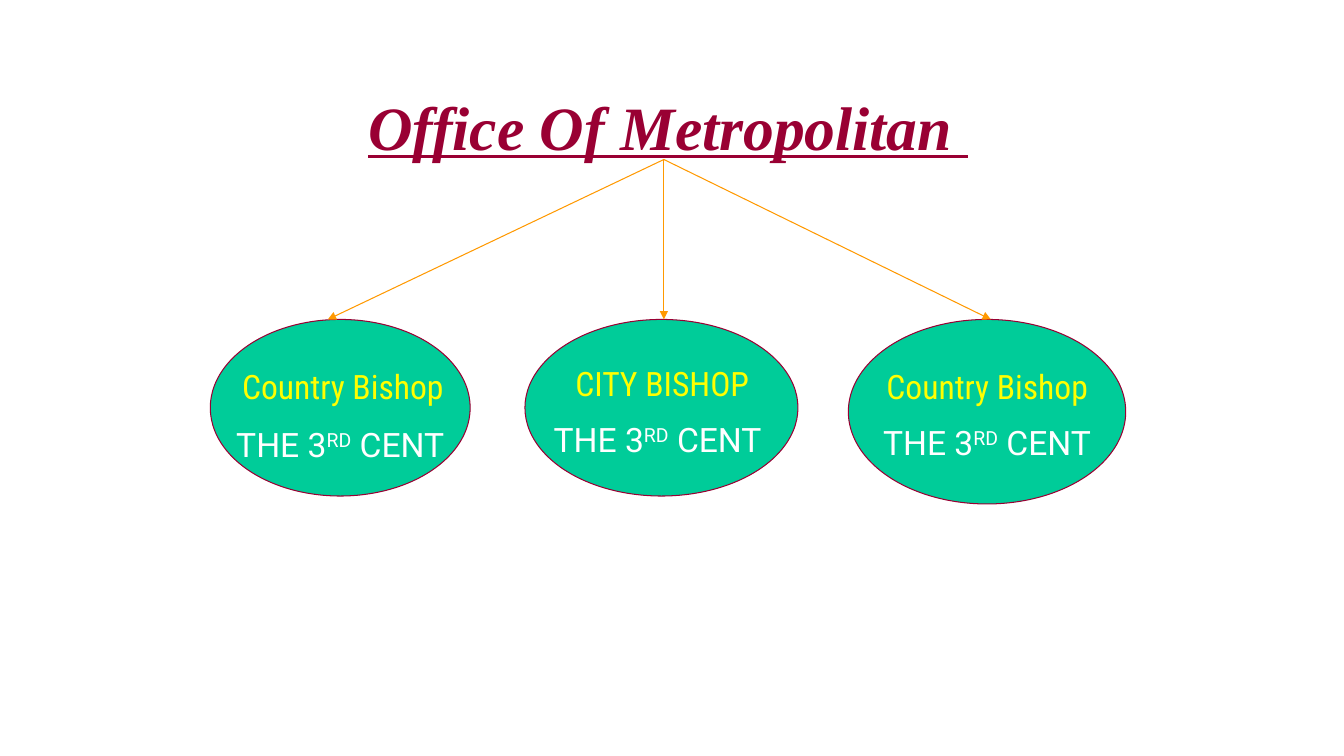
import pptx
import pptx.util
import pptx.dml.color
import pptx.enum.shapes
import pptx.enum.text
import pptx.oxml.ns
import lxml.etree

Cm = pptx.util.Cm
Pt = pptx.util.Pt
COLORS = {
    "title": "990033",
    "ellipse": "00CC99",
    "arrow": "FF9900",
    "bishop": "FFFF00",
    "century": "FFFFFF",
}


def rgb(name):
    return pptx.dml.color.RGBColor.from_string(COLORS[name])


def add_text(text, paragraph, color, font="Roboto", size=24, emphasis=False, baseline=0):
    paragraph.alignment = pptx.enum.text.PP_ALIGN.CENTER
    run = paragraph.add_run()
    run.text = text
    run.font.name = font
    run.font.size = Pt(size)
    run.font.color.rgb = rgb(color)
    run.font.bold = run.font.italic = run.font.underline = emphasis
    if baseline:
        run.font._element.set("baseline", str(baseline * 1000))


presentation = pptx.Presentation()
presentation.slide_width = Cm(33.87)
presentation.slide_height = Cm(19.05)
slide = presentation.slides.add_slide(presentation.slide_layouts[6])

title = slide.shapes.add_textbox(Cm(6.15), Cm(1.47), Cm(21.39), Cm(3.38))
title.text_frame.word_wrap = True
title.text_frame.vertical_anchor = pptx.enum.text.MSO_ANCHOR.MIDDLE
add_text("Office Of Metropolitan ", title.text_frame.paragraphs[0], "title",
         font="Times New Roman", size=44, emphasis=True)

ellipse_top = 8.05
ellipses = [
    (5.3, 6.55, 4.45, 1.85, " CENT"),
    (13.23, 6.88, 4.45, 1.56, " CENT "),
    (21.38, 6.99, 4.65, 1.52, " CENT"),
]
for left, width, height, inset, ending in ellipses:
    ellipse = slide.shapes.add_shape(
        pptx.enum.shapes.MSO_SHAPE.OVAL,
        Cm(left), Cm(ellipse_top), Cm(width), Cm(height))
    ellipse.shadow.inherit = False
    ellipse.fill.solid()
    ellipse.fill.fore_color.rgb = rgb("ellipse")
    ellipse.line.color.rgb = rgb("title")
    ellipse.line.width = Pt(0.75)
    frame = ellipse.text_frame
    frame.word_wrap = False
    frame.vertical_anchor = pptx.enum.text.MSO_ANCHOR.MIDDLE
    frame.margin_top = Cm(inset)
    frame.margin_bottom = 0
    for text, baseline in [("THE 3", 0), ("RD", 30), (ending, 0)]:
        add_text(text, frame.paragraphs[0], "century", baseline=baseline)

bishops = [
    ("Country Bishop", 5.92, 9.09, 5.44),
    ("CITY BISHOP", 13.97, 9.02, 5.44),
    ("Country Bishop", 22.02, 9.09, 5.72),
]
for text, left, top, width in bishops:
    label = slide.shapes.add_textbox(Cm(left), Cm(top), Cm(width), Cm(1.1))
    label.text_frame.word_wrap = False
    label.text_frame.margin_left = label.text_frame.margin_right = 0
    add_text(text, label.text_frame.paragraphs[0], "bishop", font="Roboto Condensed")

for arrow_end in [8.26, 16.73, 24.97]:
    arrow = slide.shapes.add_connector(
        pptx.enum.shapes.MSO_CONNECTOR.STRAIGHT,
        Cm(16.73), Cm(4.02), Cm(arrow_end), Cm(ellipse_top))
    arrow.line.color.rgb = rgb("arrow")
    arrow.line.width = Pt(0.75)
    lxml.etree.SubElement(arrow.line._get_or_add_ln(),
                          pptx.oxml.ns.qn("a:tailEnd"), type="triangle")
    lxml.etree.SubElement(arrow._element.spPr, pptx.oxml.ns.qn("a:effectLst"))

presentation.save("out.pptx")
